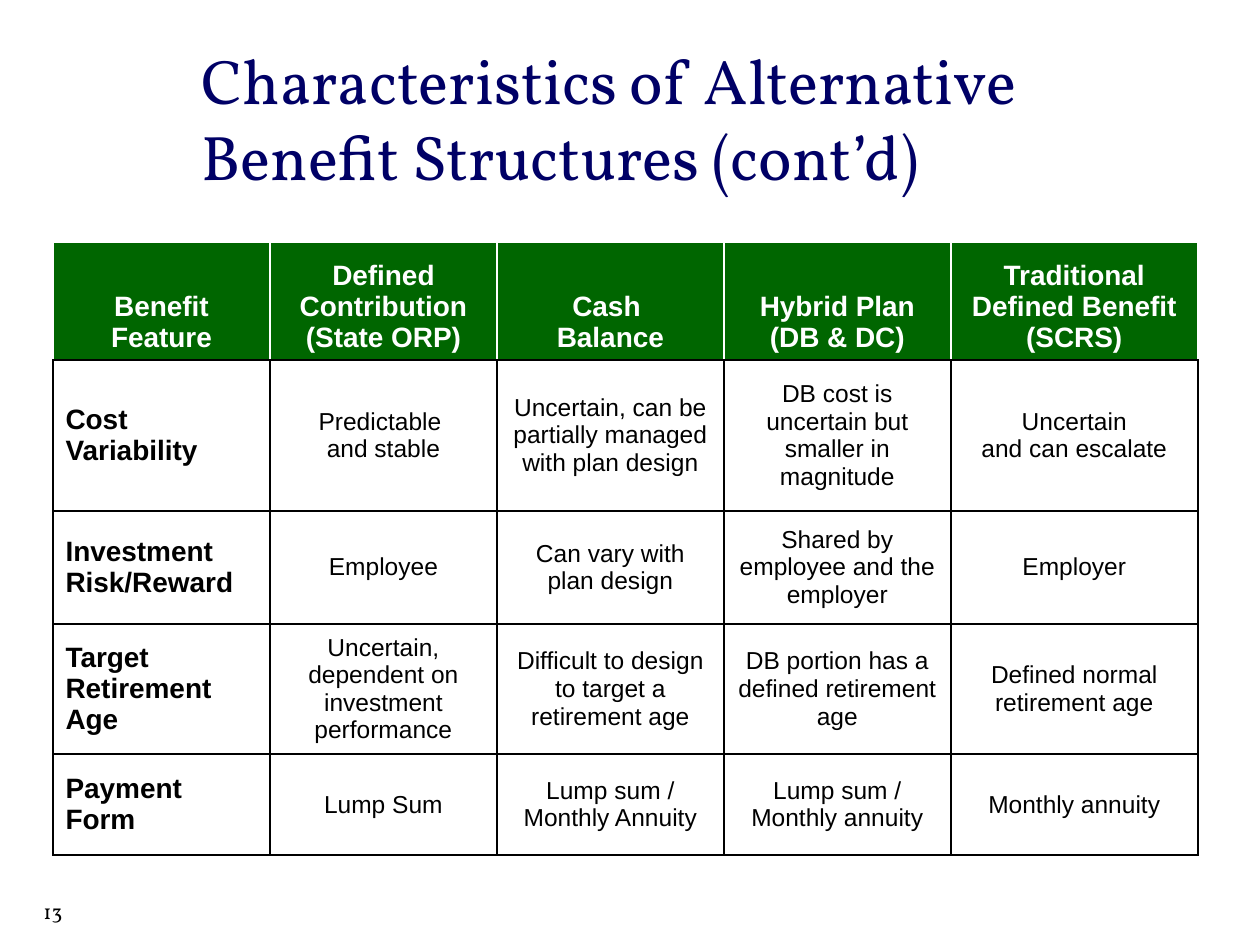
from lxml.etree import SubElement
from pptx import Presentation
from pptx.dml.color import RGBColor
from pptx.enum.text import MSO_ANCHOR as Anchor, PP_ALIGN as Align
from pptx.oxml.ns import qn
from pptx.util import Pt

PX = 914400 // 126
NAVY = RGBColor(0x00, 0x00, 0x66)
GREEN = RGBColor(0x00, 0x66, 0x00)
BLACK = RGBColor(0x00, 0x00, 0x00)
WHITE = RGBColor(0xFF, 0xFF, 0xFF)

COLUMN_WIDTHS = [217, 227, 227, 227, 247]
ROW_HEIGHTS = [118, 151, 113, 93, 101]
ROWS = [
    ["Benefit Feature", "Defined Contribution\n(State ORP)", "Cash \nBalance",
     "Hybrid Plan (DB & DC)", "Traditional Defined Benefit\n(SCRS)"],
    ["Cost Variability", "Predictable \nand stable",
     "Uncertain, can be partially managed with plan design",
     "DB cost is uncertain but smaller in magnitude",
     "Uncertain\nand can escalate"],
    ["Investment Risk/Reward", "Employee", "Can vary with plan design",
     "Shared by employee and the employer", "Employer"],
    ["Target Retirement Age", "Uncertain, dependent on investment performance",
     "Difficult to design to target a retirement age",
     "DB portion has a defined retirement age",
     "Defined normal retirement age"],
    ["Payment Form", "Lump Sum", "Lump sum / Monthly Annuity",
     "Lump sum / Monthly annuity", "Monthly annuity"],
]

HEADER = {"name": "Arial", "size": Pt(16), "bold": True, "color": WHITE}
FEATURE = {**HEADER, "color": BLACK}
DETAIL = {**FEATURE, "size": Pt(14), "bold": False}
TITLE = {"name": "Vollkorn", "size": Pt(36), "color": NAVY}
NUMBER = {**TITLE, "size": Pt(12), "color": BLACK}


def write_text(frame, text, style, align=Align.LEFT):
    """Fill the frame with one paragraph per line of text."""
    frame.text = text
    for para in frame.paragraphs:
        para.alignment = align
        for span in para.runs:
            for key, value in style.items():
                if key == "color":
                    span.font.color.rgb = value
                else:
                    setattr(span.font, key, value)


def add_text(page, left, top, width, height, text, style, anchor):
    box = page.shapes.add_textbox(left * PX, top * PX, width * PX, height * PX)
    box.text_frame.word_wrap = True
    box.text_frame.vertical_anchor = anchor
    write_text(box.text_frame, text, style)


def set_borders(cell, colors):
    """Draw 1 pt lines; colors runs left, right, top, bottom."""
    properties = cell._tc.get_or_add_tcPr()
    for side, color in zip("LRTB", colors):
        line = SubElement(properties, qn(f"a:ln{side}"), w=str(Pt(1)))
        fill = SubElement(line, qn("a:solidFill"))
        SubElement(fill, qn("a:srgbClr"), val=str(color))


def format_cell(cell, text, is_header, is_feature):
    if is_header:
        style, fill, anchor = HEADER, GREEN, Anchor.BOTTOM
        borders = [WHITE, WHITE, WHITE, BLACK]
    else:
        style, fill, anchor = (FEATURE if is_feature else DETAIL), WHITE, Anchor.MIDDLE
        borders = [BLACK] * 4
    align = Align.LEFT if is_feature and not is_header else Align.CENTER
    set_borders(cell, borders)
    cell.fill.solid()
    cell.fill.fore_color.rgb = fill
    cell.vertical_anchor = anchor
    write_text(cell.text_frame, text, style, align)


def add_benefit_table(page, left, top):
    table = page.shapes.add_table(
        len(ROWS), len(COLUMN_WIDTHS), left * PX, top * PX,
        sum(COLUMN_WIDTHS) * PX, sum(ROW_HEIGHTS) * PX).table
    for column, width in zip(table.columns, COLUMN_WIDTHS):
        column.width = width * PX
    for row, height in zip(table.rows, ROW_HEIGHTS):
        row.height = height * PX
    for r, texts in enumerate(ROWS):
        for c, text in enumerate(texts):
            format_cell(table.cell(r, c), text, r == 0, c == 0)


def main():
    deck = Presentation()
    deck.slide_width, deck.slide_height = 1260 * PX, 945 * PX
    page = deck.slides.add_slide(deck.slide_layouts[6])
    add_text(page, 31, 892, 95, 42, "13", NUMBER, Anchor.TOP)
    add_text(page, 189, 38, 1008, 158,
             "Characteristics of Alternative Benefit Structures (cont’d)",
             TITLE, Anchor.MIDDLE)
    add_benefit_table(page, 53, 242)
    deck.save("out.pptx")


if __name__ == "__main__":
    main()
